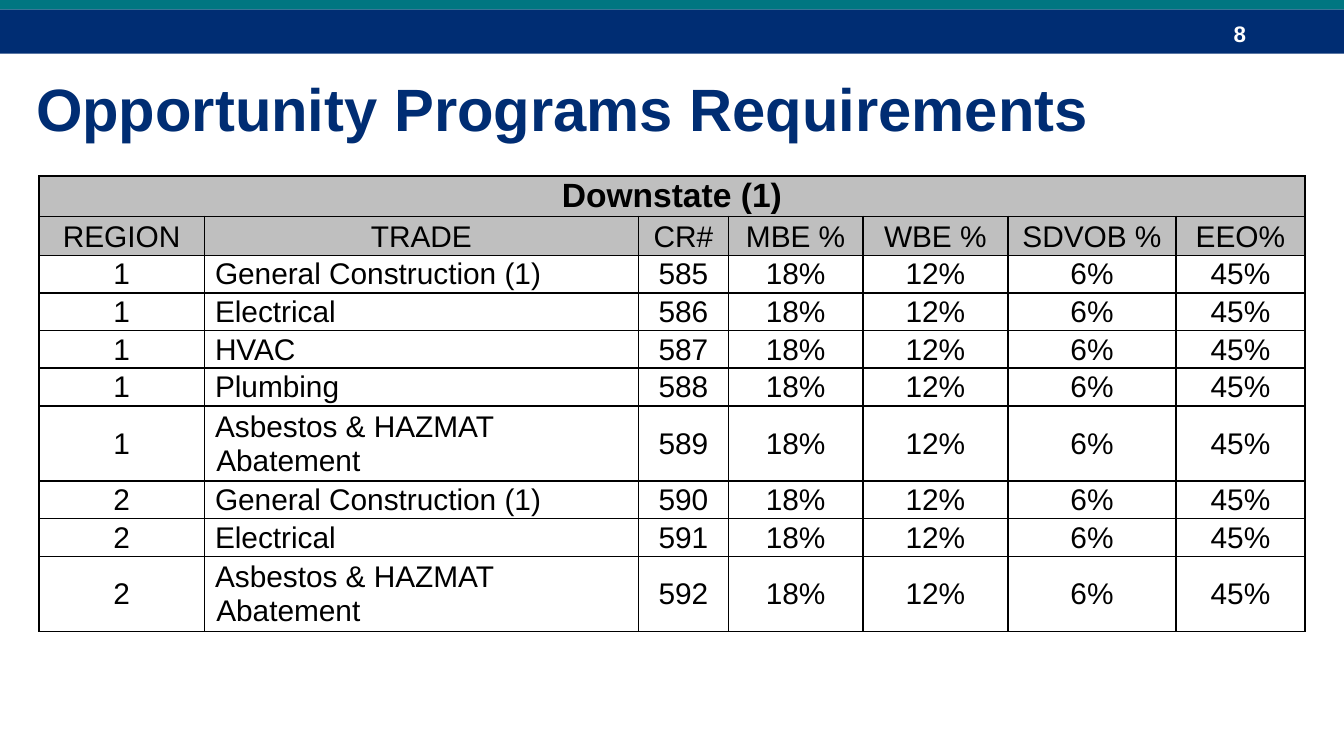
import pptx
import pptx.util
import pptx.dml.color
import pptx.enum.shapes
import pptx.enum.text
import pptx.oxml
import pptx.oxml.ns

Inches = pptx.util.Inches
Pt = pptx.util.Pt
RGBColor = pptx.dml.color.RGBColor
ALIGN = pptx.enum.text.PP_ALIGN
MIDDLE = pptx.enum.text.MSO_ANCHOR.MIDDLE

NAVY = RGBColor(0x00, 0x2D, 0x73)
TEAL = RGBColor(0x00, 0x76, 0x81)
GRAY = RGBColor(0xBF, 0xBF, 0xBF)
BLACK = RGBColor(0x00, 0x00, 0x00)
WHITE = RGBColor(0xFF, 0xFF, 0xFF)


def add_span(para, text, size, color, bold):
    span = para.add_run()
    span.text = text
    span.font.name = "Arial"
    span.font.size = Pt(size)
    span.font.color.rgb = color
    span.font.bold = bold


def add_borders(cell):
    properties = cell._tc.get_or_add_tcPr()
    for side in ("lnL", "lnR", "lnT", "lnB"):
        properties.append(pptx.oxml.parse_xml(
            f'<a:{side} {pptx.oxml.ns.nsdecls("a")} w="{Pt(1)}"><a:solidFill>'
            f'<a:srgbClr val="{BLACK}"/></a:solidFill></a:{side}>'))


deck = pptx.Presentation()
deck.slide_width = Inches(10)
deck.slide_height = Inches(10 * 9 / 16)
page = deck.slides.add_slide(deck.slide_layouts[6])

for top, height, color in [(0.07, 0.33, NAVY), (-0.02, 0.09, TEAL)]:
    band = page.shapes.add_shape(
        pptx.enum.shapes.MSO_SHAPE.RECTANGLE,
        Inches(0), Inches(top), Inches(10), Inches(height))
    band.shadow.inherit = False
    band.fill.solid()
    band.fill.fore_color.rgb = color
    band.line.fill.background()

for left, top, width, height, text, size, color in [
    (9.08, 0.1, 0.75, 0.3, "8", 12, WHITE),
    (0.17, 0.48, 9.5, 0.64, "Opportunity Programs Requirements", 32, NAVY),
]:
    box = page.shapes.add_textbox(
        Inches(left), Inches(top), Inches(width), Inches(height))
    box.text_frame.word_wrap = True
    box.text_frame.vertical_anchor = MIDDLE
    add_span(box.text_frame.paragraphs[0], text, size, color, True)

headings = ["REGION", "TRADE", "CR#", "MBE %", "WBE %", "SDVOB %", "EEO%"]
trades = [
    ("1", "General Construction (1)"),
    ("1", "Electrical"),
    ("1", "HVAC"),
    ("1", "Plumbing"),
    ("1", "Asbestos & HAZMAT Abatement"),
    ("2", "General Construction (1)"),
    ("2", "Electrical"),
    ("2", "Asbestos & HAZMAT Abatement"),
]
goals = ["18%", "12%", "6%", "45%"]
rows = [["Downstate (1)"] + [""] * 6, headings]
for number, (region, trade) in enumerate(trades, start=585):
    rows.append([region, trade, str(number)] + goals)

column_widths = [1.23, 3.23, 0.67, 1, 1.08, 1.25, 0.96]
row_heights = [0.3, 0.29] + [0.28] * 4 + [0.56, 0.28, 0.28, 0.56]
table = page.shapes.add_table(
    len(rows), len(headings), Inches(0.29), Inches(1.31),
    Inches(sum(column_widths)), Inches(sum(row_heights))).table
table.first_row = False
table.horz_banding = False
for column, width in zip(table.columns, column_widths):
    column.width = Inches(width)
for row, height in zip(table.rows, row_heights):
    row.height = Inches(height)
table.cell(0, 0).merge(table.cell(0, 6))

for row_index, texts in enumerate(rows):
    for column_index, text in enumerate(texts):
        cell = table.cell(row_index, column_index)
        add_borders(cell)
        cell.margin_left = cell.margin_right = Inches(0.08)
        cell.margin_top = cell.margin_bottom = Inches(0)
        cell.vertical_anchor = MIDDLE
        if row_index < 2:
            cell.fill.solid()
            cell.fill.fore_color.rgb = GRAY
        else:
            cell.fill.background()
        if not text:
            continue
        para = cell.text_frame.paragraphs[0]
        is_trade = row_index > 1 and column_index == 1
        para.alignment = ALIGN.LEFT if is_trade else ALIGN.CENTER
        if row_index == 1:
            para.line_spacing = 1.07
        elif row_index > 1:
            para.line_spacing = 1.03
            para.space_after = Pt(0.1)
            indent = para._p.get_or_add_pPr()
            indent.set("marL", str(Inches(0.01)))
            indent.set("indent", str(-Inches(0.01)))
        add_span(para, text, 18 if row_index == 0 else 16, BLACK, row_index == 0)

deck.save("out.pptx")
